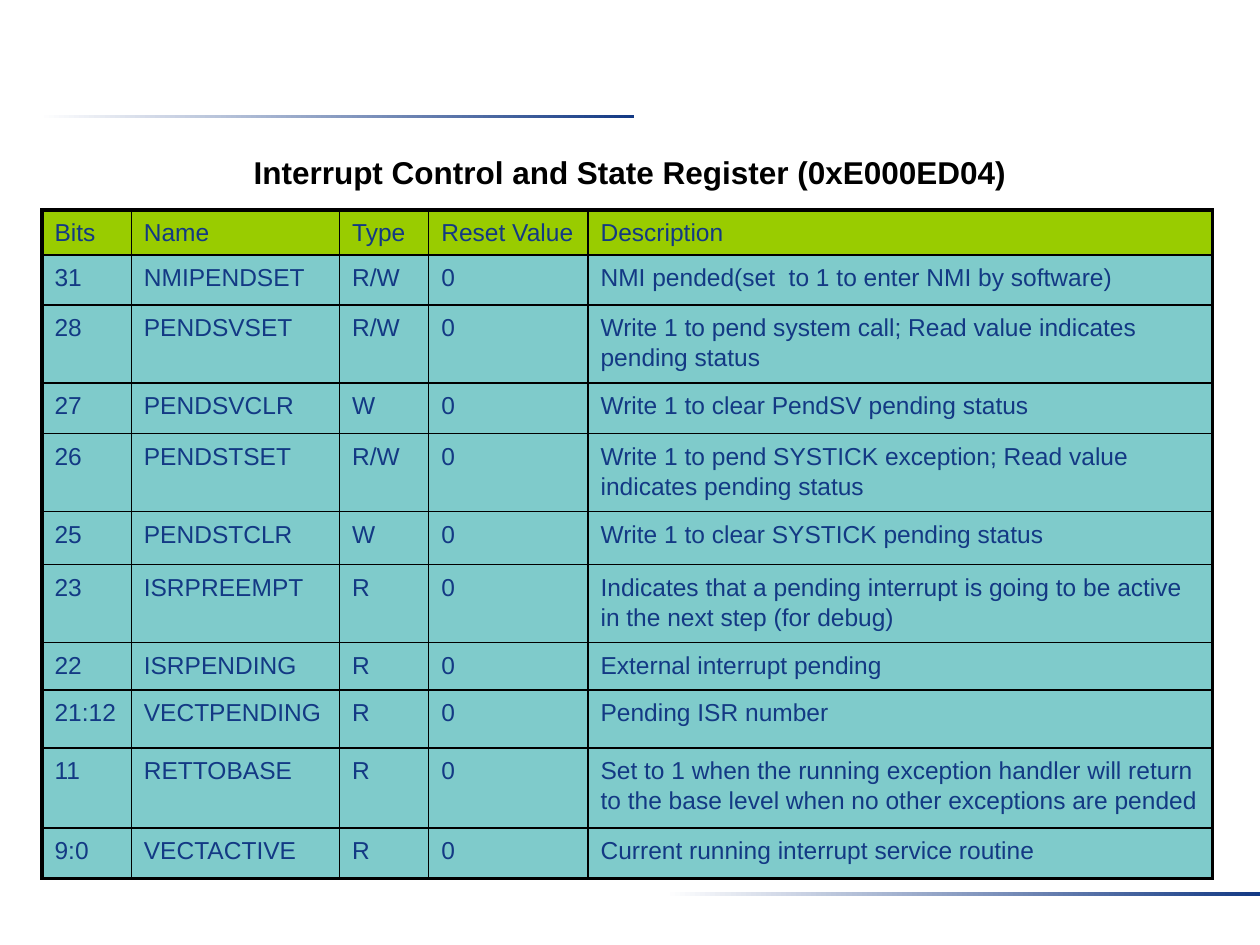
from lxml import etree
from pptx import Presentation
from pptx import util as u
from pptx.dml import color
from pptx.enum import shapes, text
from pptx.oxml import ns

Pt = u.Pt

ROWS = [
    (25.7, "Bits", "Name", "Type", "Reset Value", "Description"),
    (28.6, "31", "NMIPENDSET", "R/W", "0", "NMI pended(set  to 1 to enter NMI by software)"),
    (44.6, "28", "PENDSVSET", "R/W", "0",
     "Write 1 to pend system call; Read value indicates pending status"),
    (29, "27", "PENDSVCLR", "W", "0", "Write 1 to clear PendSV pending status"),
    (44.6, "26", "PENDSTSET", "R/W", "0",
     "Write 1 to pend SYSTICK exception; Read value indicates pending status"),
    (30.3, "25", "PENDSTCLR", "W", "0", "Write 1 to clear SYSTICK pending status"),
    (44.6, "23", "ISRPREEMPT", "R", "0",
     "Indicates that a pending interrupt is going to be active in the next step (for debug)"),
    (27, "22", "ISRPENDING", "R", "0", "External interrupt pending"),
    (33.1, "21:12", "VECTPENDING", "R", "0", "Pending ISR number"),
    (45.8, "11", "RETTOBASE", "R", "0",
     "Set to 1 when the running exception handler will return to the base level "
     "when no other exceptions are pended"),
    (29, "9:0", "VECTACTIVE", "R", "0", "Current running interrupt service routine"),
]
COLUMNS = [51, 119, 51, 91, 357]


def rgb(value):
    return color.RGBColor.from_string(value)


class Deck:
    font = "Arial"
    navy = "133984"
    black = "000000"
    white = "FFFFFF"
    header = "99CC00"
    body = "009999"
    thin = 1
    thick = 2.25

    def __init__(self, width, height):
        self.prs = Presentation()
        self.prs.slide_width, self.prs.slide_height = Pt(width), Pt(height)
        self.s = self.prs.slides.add_slide(self.prs.slide_layouts[5])

    def style(self, p, size, hue, bold=False):
        p.font.name = self.font
        p.font.size = Pt(size)
        p.font.bold = bold
        p.font.color.rgb = rgb(hue)

    def rule(self, x, y, w, h):
        sp = self.s.shapes.add_shape(
            shapes.MSO_SHAPE.RECTANGLE, Pt(x), Pt(y), Pt(w), Pt(h))
        sp.shadow.inherit = False
        sp.line.fill.background()
        sp.fill.gradient()
        sp.fill.gradient_angle = 0
        for stop, hue in zip(sp.fill.gradient_stops, (self.white, self.navy)):
            stop.color.rgb = rgb(hue)

    def title(self, x, y, w, h, words):
        sp = self.s.shapes.title
        sp.left, sp.top, sp.width, sp.height = Pt(x), Pt(y), Pt(w), Pt(h)
        tf = sp.text_frame
        tf.text = words
        tf.word_wrap = True
        tf.auto_size = text.MSO_AUTO_SIZE.NONE
        tf.vertical_anchor = text.MSO_ANCHOR.TOP
        p = tf.paragraphs[0]
        p.alignment = text.PP_ALIGN.CENTER
        self.style(p, 18, self.black, True)

    def borders(self, cell, outer):
        tc_pr = cell._tc.get_or_add_tcPr()
        for i, (side, is_outer) in enumerate(zip("LRTB", outer)):
            ln = etree.Element(ns.qn(f"a:ln{side}"))
            ln.set("w", str(Pt(self.thick if is_outer else self.thin)))
            fill = etree.SubElement(ln, ns.qn("a:solidFill"))
            etree.SubElement(fill, ns.qn("a:srgbClr")).set("val", self.black)
            tc_pr.insert(i, ln)

    def cell(self, cell, words, is_header):
        cell.text = words
        p = cell.text_frame.paragraphs[0]
        p.line_spacing = 1.1
        self.style(p, 14, self.navy)
        cell.fill.solid()
        cell.fill.fore_color.rgb = rgb(self.header if is_header else self.body)
        if not is_header:
            hue = cell._tc.tcPr.find(".//" + ns.qn("a:srgbClr"))
            etree.SubElement(hue, ns.qn("a:alpha")).set("val", "50000")

    def table(self, x, y, columns, rows):
        frame = self.s.shapes.add_table(
            len(rows), len(columns), Pt(x), Pt(y),
            Pt(sum(columns)), Pt(sum(row[0] for row in rows)))
        table = frame.table
        table.first_row = table.horz_banding = False
        for column, width in zip(table.columns, columns):
            column.width = Pt(width)
        last_row, last_column = len(rows) - 1, len(columns) - 1
        for i, (height, *words) in enumerate(rows):
            table.rows[i].height = Pt(height)
            for j, word in enumerate(words):
                cell = table.cell(i, j)
                self.cell(cell, word, i == 0)
                self.borders(cell, (j == 0, j == last_column, i == 0, i == last_row))


def main():
    deck = Deck(720, 540)
    deck.rule(22.3, 65.5, 340, 2.2)
    deck.rule(380, 510, 340, 2.2)
    deck.title(130, 84, 460, 29, "Interrupt Control and State Register (0xE000ED04)")
    deck.table(24, 120, COLUMNS, ROWS)
    deck.prs.save("out.pptx")


if __name__ == "__main__":
    main()
